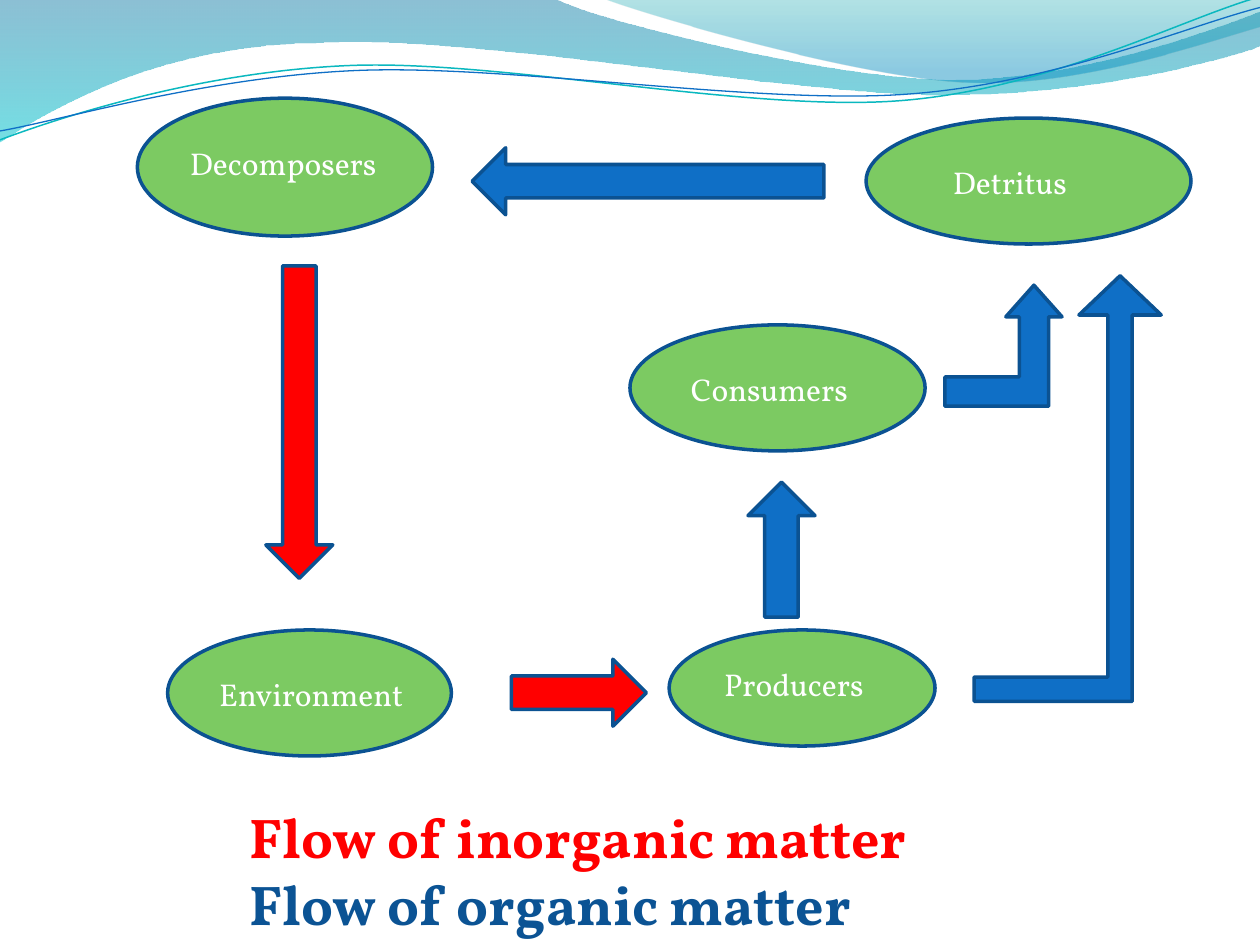
from math import cos, radians, sin

from lxml.etree import SubElement
from pptx import Presentation
from pptx.dml.color import RGBColor
from pptx.enum.shapes import MSO_SHAPE
from pptx.oxml.ns import qn
from pptx.util import Cm, Pt

FONT = "Vollkorn"
COLOURS = {
    "organism": "7CCA62", "outline": "0B5292", "label": "FFFFFF",
    "inorganic": "FF0000", "organic": "0F6FC6", "organic text": "0B5394",
    "teal line": "0AB8BF", "blue line": "0F6FC6",
    "deep blue": "0074A1", "aqua": "00C6CF", "sea green": "00A1A9", "sky": "008BBF",
}

# Wave outlines in tenths of the slide width: a start point, then segments.
# One point makes a straight segment, three make a Bézier curve.
# Gradient stops are (position, colour, opacity in percent).
FILLED_WAVES = [
    ((0, -0.01), [
        [(4.4, -0.01)],
        [(4.76, 0.17), (6.64, 0.63), (7.58, 0.63)],
        [(8.53, 0.63), (9.58, 0.26), (10, 0.09)],
        [(10.01, 0.36)],
        [(9.83, 0.44), (8.7, 0.76), (7.46, 0.75)],
        [(6.22, 0.75), (3.82, 0.28), (2.57, 0.34)],
        [(1.29, 0.35), (0.46, 0.83), (-0.01, 1.13)],
        [(0, -0.01)],
    ], [(0, "deep blue", 45), (1, "aqua", 55)]),
    ((4.79, -0.01), [
        [(5.09, 0.11), (6.82, 0.62), (7.69, 0.65)],
        [(8.56, 0.69), (9.61, 0.32), (10, 0.21)],
        [(10, 0)],
        [(4.79, -0.01)],
    ], [(0, "sea green", 30), (0.8, "sky", 45)]),
]
# Each line ends with its colour, weight and centre of rotation.
WAVE_LINES = [
    ((0, 1.11), [
        [(0.48, 0.93), (1.58, 0.57), (2.77, 0.52)],
        [(3.95, 0.47), (5.93, 0.89), (7.13, 0.8)],
        [(8.33, 0.71), (9.38, 0.15), (9.98, -0.02)],
    ], "teal line", 0.85, (4.99, 0.58)),
    ((0, 1.04), [
        [(0.47, 0.96), (1.64, 0.61), (2.83, 0.56)],
        [(4.03, 0.51), (5.97, 0.83), (7.17, 0.75)],
        [(8.36, 0.67), (9.41, 0.21), (10, 0.06)],
    ], "blue line", 0.75, (5, 0.59)),
]
LINE_TILT = -2.7

# Name, box in cm, label box inside it, label indent
STAGES = [
    ("Decomposers", (2.77, 1.98, 5.95, 2.78), (0.81, 0.79, 4.37, 1.02), 0),
    ("Environment", (3.38, 12.7, 5.72, 2.54), (0.79, 0.79, 4.95, 1.02), 0),
    ("Producers", (13.49, 12.7, 5.36, 2.34), (0.61, 0.59, 4.37, 1.02), 0.25),
    ("Consumers", (12.7, 6.55, 5.95, 2.54), (0.59, 0.79, 4.95, 1.02), 0.39),
    ("Detritus", (17.46, 2.38, 6.55, 2.54), (0.6, 0.79, 5.16, 1.02), 0.9),
]
# Preset, box in cm, kind of matter, adjustments
FLOWS = [
    (MSO_SHAPE.DOWN_ARROW, (5.36, 5.36, 1.35, 6.3), "inorganic", ()),
    (MSO_SHAPE.RIGHT_ARROW, (10.31, 13.29, 2.72, 1.35), "inorganic", ()),
    (MSO_SHAPE.UP_ARROW, (15.08, 9.72, 1.35, 2.72), "organic", ()),
    (MSO_SHAPE.BENT_UP_ARROW, (19.05, 5.75, 2.36, 2.44), "organic", (0.25, 0.24, 0.27)),
    (MSO_SHAPE.BENT_UP_ARROW, (19.64, 5.56, 3.77, 8.58), "organic", (0.13, 0.22, 0.21)),
    (MSO_SHAPE.LEFT_ARROW, (9.52, 2.98, 7.09, 1.35), "organic", ()),
]


def rgb(name):
    return RGBColor.from_string(COLOURS[name])


def add_text(slide, box, text, colours, size=18, bold=False, indent=0):
    """Write each line of text as a paragraph in its own colour."""
    frame = slide.shapes.add_textbox(*map(Cm, box)).text_frame
    frame.word_wrap = True
    frame.margin_left = Cm(0.25 + indent)
    frame.text = text
    for paragraph, colour in zip(frame.paragraphs, colours):
        font = paragraph.runs[0].font
        font.name, font.size, font.bold = FONT, Pt(size), bold
        font.color.rgb = rgb(colour)


def add_outlined(slide, preset, box, colour, adjustments=()):
    shape = slide.shapes.add_shape(preset, *map(Cm, box))
    shape.shadow.inherit = False
    for index, value in enumerate(adjustments):
        shape.adjustments[index] = value
    shape.fill.solid()
    shape.fill.fore_color.rgb = rgb(colour)
    shape.line.color.rgb = rgb("outline")
    shape.line.width = Pt(2)


def turn(point, centre, degrees):
    dx, dy = point[0] - centre[0], point[1] - centre[1]
    c, s = cos(radians(degrees)), sin(radians(degrees))
    return centre[0] + dx * c - dy * s, centre[1] + dx * s + dy * c


def bend(wave, segments):
    """Turn each run of three straight segments into one Bézier curve."""
    outline = next(wave.element.spPr.iter(qn("a:path")))
    straights = iter(outline.findall(qn("a:lnTo")))
    for segment in segments:
        parts = [next(straights) for _ in segment]
        if len(parts) == 3:
            curve = SubElement(outline, qn("a:cubicBezTo"))
            parts[0].addprevious(curve)
            for part in parts:
                curve.append(part[0])
                outline.remove(part)


def add_wave(shapes, box, start, segments, closed=False, centre=(0, 0), tilt=0):
    left, top, width, _ = box
    points = [turn(point, centre, -tilt) for point in [start, *sum(segments, [])]]
    points = [(Cm(left + x * width / 10), Cm(top + y * width / 10)) for x, y in points]
    builder = shapes.build_freeform(*points[0])
    builder.add_line_segments(points[1:], close=closed)
    wave = builder.convert_to_shape()
    bend(wave, segments)
    wave.rotation = tilt
    wave.shadow.inherit = False
    return wave


def draw_waves(slide, box):
    for start, segments, stops in FILLED_WAVES:
        wave = add_wave(slide.shapes, box, start, segments, closed=True)
        wave.line.fill.background()
        wave.fill.gradient()
        wave.fill.gradient_angle = 270
        for stop, (position, colour, _) in zip(wave.fill.gradient_stops, stops):
            stop.position = position
            stop.color.rgb = rgb(colour)
        stop_colours = wave.element.spPr.iter(qn("a:srgbClr"))
        for stop_colour, (_, _, opacity) in zip(stop_colours, stops):
            SubElement(stop_colour, qn("a:alpha"), val=str(opacity * 1000))
    line_group = slide.shapes.add_group_shape()
    for start, segments, colour, weight, centre in WAVE_LINES:
        wave = add_wave(line_group.shapes, box, start, segments, centre=centre, tilt=LINE_TILT)
        wave.fill.background()
        wave.line.color.rgb = rgb(colour)
        wave.line.width = Pt(weight)


def draw_stage(slide, box, name, label_box, indent):
    add_outlined(slide, MSO_SHAPE.OVAL, box, "organism")
    x, y, width, height = label_box
    add_text(slide, (box[0] + x, box[1] + y, width, height), name, ["label"], indent=indent)


def draw_legend(slide, box):
    add_text(slide, box, "Flow of inorganic matter\nFlow of organic matter",
             ["inorganic", "organic text"], size=32, bold=True, indent=1.81)


def main():
    presentation = Presentation()
    presentation.slide_width, presentation.slide_height = Cm(25.4), Cm(19.05)
    slide = presentation.slides.add_slide(presentation.slide_layouts[6])
    draw_waves(slide, (0, 0, 25.4, 2.9))
    for name, box, label_box, indent in STAGES:
        draw_stage(slide, box, name, label_box, indent)
    for preset, box, matter, adjustments in FLOWS:
        add_outlined(slide, preset, box, matter, adjustments)
    draw_legend(slide, (2.97, 16.05, 21.23, 3))
    presentation.save("out.pptx")


if __name__ == "__main__":
    main()
